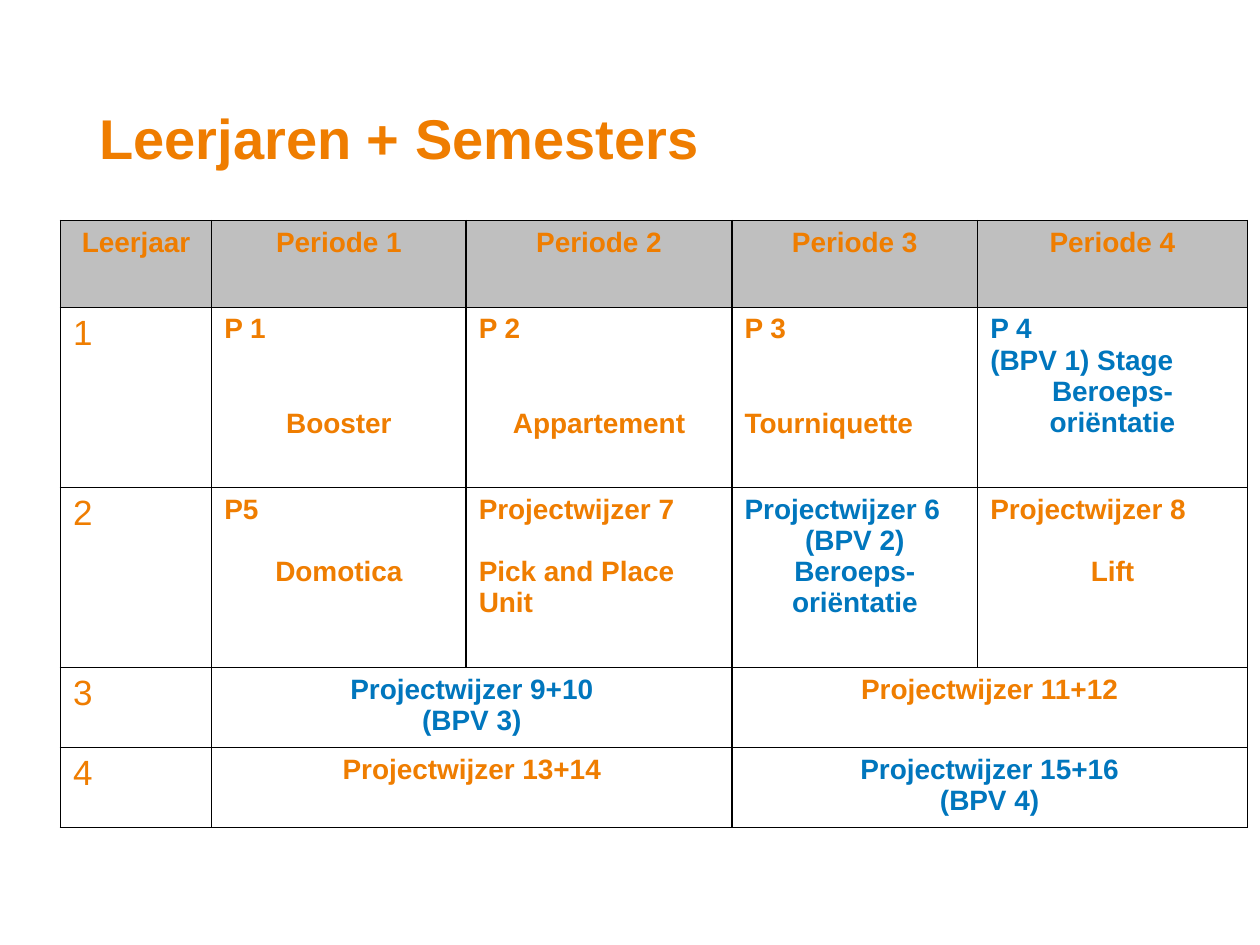
from lxml.etree import SubElement
from pptx import Presentation
from pptx.dml.color import RGBColor
from pptx.enum.text import MSO_ANCHOR, PP_ALIGN
from pptx.oxml.ns import qn
from pptx.util import Inches, Pt

COLORS = {"orange": "EF7D00", "blue": "0076BD", "gray": "BFBFBF", "white": "FFFFFF", "black": "000000"}
LEFT, CENTER = PP_ALIGN.LEFT, PP_ALIGN.CENTER
BLANK_LINE = 18

TITLE = "Leerjaren + Semesters"
HEADERS = ["Leerjaar", "Periode 1", "Periode 2", "Periode 3", "Periode 4"]
COLUMN_WIDTHS = [1.2, 2.02, 2.11, 1.95, 2.14]
ROW_HEIGHTS = [0.69, 1.43, 1.43, 0.63, 0.61]

# Each line: text, alignment, blank lines above
YEARS = [
    [
        ("orange", [("P 1", LEFT, 0), ("Booster", CENTER, 2)]),
        ("orange", [("P 2", LEFT, 0), ("Appartement", CENTER, 2)]),
        ("orange", [("P 3", LEFT, 0), ("Tourniquette", LEFT, 2)]),
        ("blue", [("P 4", LEFT, 0), ("(BPV 1) Stage", LEFT, 0), ("Beroeps-oriëntatie", CENTER, 0)]),
    ],
    [
        ("orange", [("P5", LEFT, 0), ("Domotica", CENTER, 1)]),
        ("orange", [("Projectwijzer 7", LEFT, 0), ("Pick and Place Unit", LEFT, 1)]),
        ("blue", [("Projectwijzer 6", LEFT, 0), ("(BPV 2) Beroeps-oriëntatie", CENTER, 0)]),
        ("orange", [("Projectwijzer 8", LEFT, 0), ("Lift", CENTER, 1)]),
    ],
    [
        ("blue", [("Projectwijzer 9+10", CENTER, 0), ("(BPV 3)", CENTER, 0)]),
        ("orange", [("Projectwijzer 11+12", CENTER, 0)]),
    ],
    [
        ("orange", [("Projectwijzer 13+14", CENTER, 0)]),
        ("blue", [("Projectwijzer 15+16", CENTER, 0), ("(BPV 4)", CENTER, 0)]),
    ],
]


def write_text(paragraph, text, size=16, color="orange", bold=True, align=LEFT, gap=0):
    paragraph.alignment = align
    if gap:
        paragraph.space_before = Pt(gap)
    run = paragraph.add_run()
    run.text = text
    run.font.name = "Arial"
    run.font.size = Pt(size)
    run.font.bold = bold
    run.font.color.rgb = RGBColor.from_string(COLORS[color])


def format_cell(cell, fill):
    properties = cell._tc.get_or_add_tcPr()
    for side in ("lnL", "lnR", "lnT", "lnB"):
        line = SubElement(properties, qn(f"a:{side}"), w=str(Pt(1)))
        solid = SubElement(line, qn("a:solidFill"))
        SubElement(solid, qn("a:srgbClr"), val=COLORS["black"])
    cell.fill.solid()
    cell.fill.fore_color.rgb = RGBColor.from_string(COLORS[fill])


def fill_cell(cell, color, lines):
    frame = cell.text_frame
    for index, (text, align, blanks) in enumerate(lines):
        paragraph = frame.add_paragraph() if index else frame.paragraphs[0]
        write_text(paragraph, text, color=color, align=align, gap=blanks * BLANK_LINE)


def add_title(slide):
    box = slide.shapes.add_textbox(Inches(0.69), Inches(0.4), Inches(8.62), Inches(1.45))
    frame = box.text_frame
    frame.word_wrap = True
    frame.vertical_anchor = MSO_ANCHOR.MIDDLE
    frame.paragraphs[0].line_spacing = 0.9
    write_text(frame.paragraphs[0], TITLE, size=32)


def add_schedule(slide):
    table = slide.shapes.add_table(
        len(ROW_HEIGHTS), len(COLUMN_WIDTHS), Inches(0.48), Inches(1.75),
        Inches(sum(COLUMN_WIDTHS)), Inches(sum(ROW_HEIGHTS)),
    ).table
    table.horz_banding = False
    for column, width in zip(table.columns, COLUMN_WIDTHS):
        column.width = Inches(width)
    for index, height in enumerate(ROW_HEIGHTS):
        table.rows[index].height = Inches(height)
        for cell in table.rows[index].cells:
            format_cell(cell, "white" if index else "gray")

    for column, header in enumerate(HEADERS):
        fill_cell(table.cell(0, column), "orange", [(header, CENTER, 0)])
    for year, projects in enumerate(YEARS, start=1):
        write_text(table.cell(year, 0).text_frame.paragraphs[0], str(year), size=20, bold=False)
        span = (len(COLUMN_WIDTHS) - 1) // len(projects)
        for position, (color, lines) in enumerate(projects):
            first = 1 + position * span
            cell = table.cell(year, first)
            if span > 1:
                cell.merge(table.cell(year, first + span - 1))
            fill_cell(cell, color, lines)


def main():
    presentation = Presentation()
    presentation.slide_width = Inches(10)
    presentation.slide_height = Inches(7.5)
    slide = presentation.slides.add_slide(presentation.slide_layouts[6])
    add_title(slide)
    add_schedule(slide)
    presentation.save("out.pptx")


if __name__ == "__main__":
    main()
